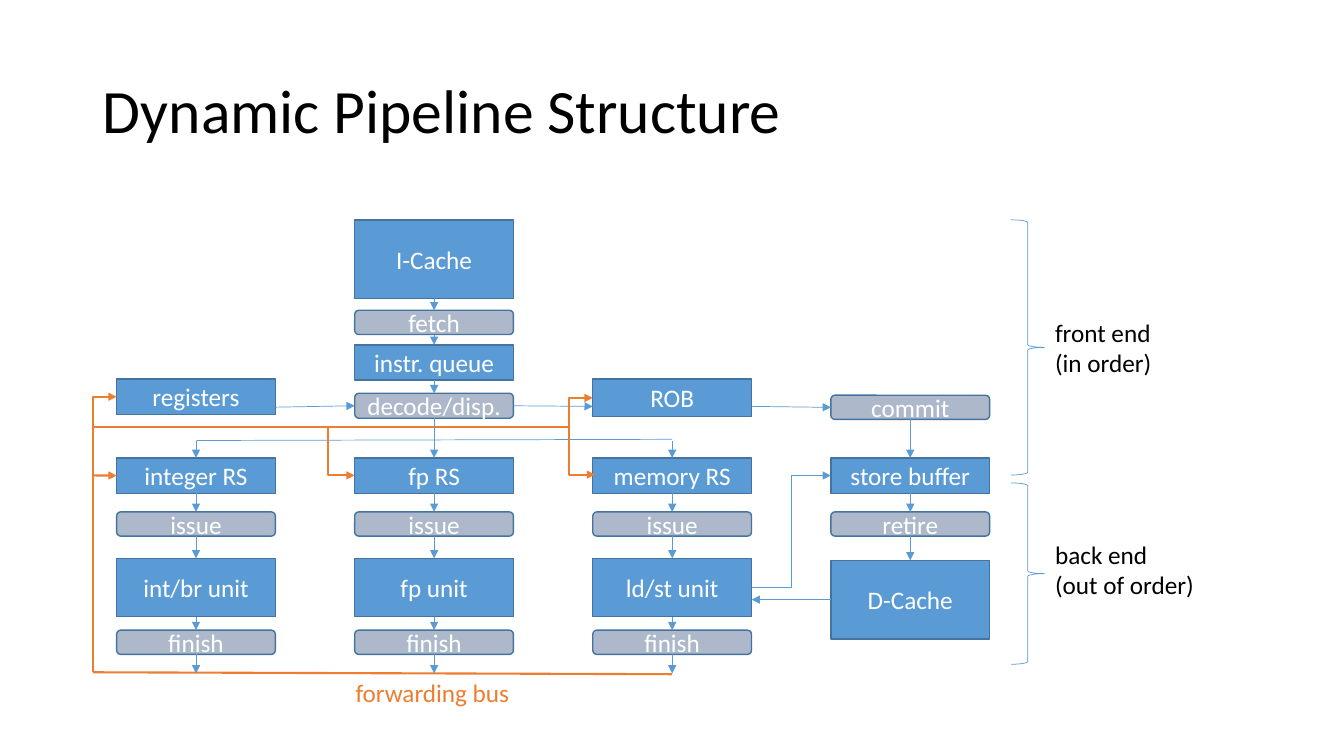
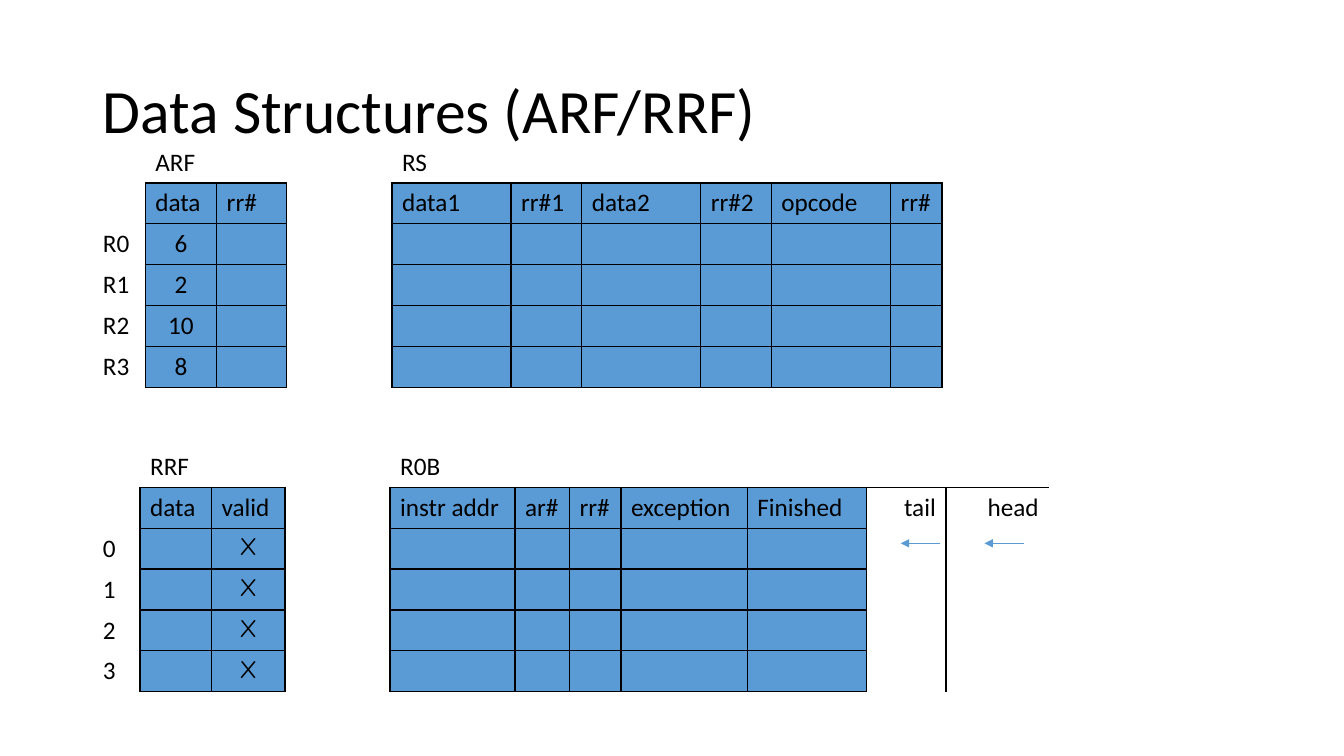
from dataclasses import dataclass
from itertools import pairwise

from lxml.etree import SubElement
from pptx import Presentation
from pptx.dml.color import RGBColor
from pptx.enum.shapes import MSO_CONNECTOR as Link, MSO_SHAPE as Preset
from pptx.enum.text import MSO_ANCHOR as Anchor, MSO_AUTO_SIZE as AutoSize, PP_ALIGN as Align
from pptx.oxml.ns import qn
from pptx.util import Cm, Pt

COLOURS = {
    "block": "5B9BD5",
    "step": "ADB9CA",
    "edge": "43739E",
    "bus": "ED7D31",
    "ink": "000000",
    "paper": "FFFFFF",
}
FONT = "Calibri"
MARK_FONT = "Comic Neue"
NO_STYLE = "{2D5ABB26-0587-4C30-8999-92F81FD0307C}"
TOP, LEFT, BOTTOM, RIGHT = range(4)
FIRST_COLUMN, COLUMN_STEP, BLOCK_WIDTH = 2.94, 6, 4
ROW_HEIGHT = 1.03
BUS_LEFT = 2.34
BUS_TOP = 10.77
BUS_BOTTOM = 16.94


@dataclass(frozen=True)
class Block:
    label: str
    top: float
    height: float
    step: bool = False


@dataclass(frozen=True)
class Label:
    lines: tuple
    left: float
    top: float
    width: float
    height: float
    colour: str = "ink"


@dataclass(frozen=True)
class Grid:
    left: float
    top: float
    widths: tuple
    captions: tuple
    rows: tuple
    filled: frozenset
    centred: int = -1
    right: tuple = ()


def rgb(name: str) -> RGBColor:
    return RGBColor.from_string(COLOURS[name])


def format_para(para, colour: str, size: int = 18, font: str = FONT, align=Align.LEFT) -> None:
    para.alignment = align
    para.font.name = font
    para.font.size = Pt(size)
    para.font.color.rgb = rgb(colour)


def add_page(deck, title: str):
    page = deck.slides.add_slide(deck.slide_layouts[5])
    box = page.shapes.title
    box.left, box.top, box.width, box.height = Cm(2.34), Cm(1.02), Cm(29.21), Cm(3.68)
    box.text_frame.text = title
    box.text_frame.vertical_anchor = Anchor.MIDDLE
    para = box.text_frame.paragraphs[0]
    format_para(para, "ink", 44)
    para.line_spacing = 0.9
    return page


def style_line(line, colour: str, arrow: bool, width: float) -> None:
    line.line.color.rgb = rgb(colour)
    line.line.width = Pt(width)
    properties = line.element.spPr
    if arrow:
        SubElement(properties.find(qn("a:ln")), qn("a:tailEnd"), type="triangle")
    SubElement(properties, qn("a:effectLst"))


def add_line(page, start: tuple, end: tuple, colour: str = "block", arrow: bool = True,
             begin=None, finish=None, kind=Link.STRAIGHT):
    line = page.shapes.add_connector(kind, *(Cm(value) for value in start + end))
    if begin:
        line.begin_connect(*begin)
    if finish:
        line.end_connect(*finish)
    style_line(line, colour, arrow, 1.5 if colour == "bus" else 0.5)
    return line


def add_corner(page, start: tuple, end: tuple) -> None:
    (x1, y1), (x2, y2) = start, end
    middle_x, middle_y = (x1 + x2) / 2, (y1 + y2) / 2
    half_width, half_height = abs(y2 - y1) / 2, abs(x2 - x1) / 2
    line = add_line(page, (middle_x - half_width, middle_y - half_height),
                    (middle_x + half_width, middle_y + half_height), "bus", kind=Link.ELBOW)
    properties = line.element.spPr
    properties.find(qn("a:prstGeom")).set("prst", "bentConnector2")
    frame = properties.find(qn("a:xfrm"))
    rising = y2 < y1
    frame.set("rot", str((90 if rising else 270) * 60000))
    frame.set("flipH", "1")
    if rising:
        frame.set("flipV", "1")


def add_block(page, block: Block, column: int):
    shape = page.shapes.add_shape(
        Preset.ROUNDED_RECTANGLE if block.step else Preset.RECTANGLE,
        Cm(FIRST_COLUMN + COLUMN_STEP * column), Cm(block.top), Cm(BLOCK_WIDTH), Cm(block.height))
    shape.shadow.inherit = False
    shape.fill.solid()
    shape.fill.fore_color.rgb = rgb("step" if block.step else "block")
    shape.line.color.rgb = rgb("edge")
    shape.line.width = Pt(1)
    shape.text_frame.text = block.label
    shape.text_frame.vertical_anchor = Anchor.MIDDLE
    format_para(shape.text_frame.paragraphs[0], "paper", align=Align.CENTER)
    return shape


def add_chain(page, blocks: tuple, column: int) -> list:
    shapes = [add_block(page, block, column) for block in blocks]
    for upper, lower in pairwise(shapes):
        add_line(page, (0, 0), (0, 0), begin=(upper, BOTTOM), finish=(lower, TOP))
    return shapes


def add_label(page, label: Label) -> None:
    box = page.shapes.add_textbox(Cm(label.left), Cm(label.top), Cm(label.width), Cm(label.height))
    frame = box.text_frame
    frame.word_wrap = False
    frame.auto_size = AutoSize.SHAPE_TO_FIT_TEXT
    frame.text = "\n".join(label.lines)
    for para in frame.paragraphs:
        format_para(para, label.colour)


def add_brace(page, top: float, height: float) -> None:
    brace = page.shapes.add_shape(Preset.RIGHT_BRACE, Cm(25.48), Cm(top), Cm(0.84), Cm(height))
    brace.shadow.inherit = False
    brace.fill.background()
    brace.line.color.rgb = rgb("block")
    brace.line.width = Pt(0.5)


def add_border(cell, side: str) -> None:
    border = SubElement(cell._tc.get_or_add_tcPr(), qn(f"a:ln{side}"), w=str(Pt(1)))
    fill = SubElement(border, qn("a:solidFill"))
    SubElement(fill, qn("a:srgbClr"), val=COLOURS["ink"])


def add_grid(page, grid: Grid) -> None:
    row_count, column_count = len(grid.rows) + 1, len(grid.widths)
    frame = page.shapes.add_table(row_count, column_count, Cm(grid.left), Cm(grid.top),
                                  Cm(sum(grid.widths)), Cm(ROW_HEIGHT * row_count))
    table = frame.table
    table.first_row = table.horz_banding = False
    frame.element.find(f".//{qn('a:tableStyleId')}").text = NO_STYLE
    for column, width in zip(table.columns, grid.widths):
        column.width = Cm(width)
    for row in table.rows:
        row.height = Cm(ROW_HEIGHT)

    texts = {(row, column): text for row, line in enumerate(grid.rows, 1)
             for column, text in enumerate(line)}
    for start, span, caption in grid.captions:
        texts[0, start] = caption
        table.cell(0, start).merge(table.cell(0, start + span - 1))

    def is_filled(row: int, column: int) -> bool:
        return 0 < row < row_count and column in grid.filled

    for row in range(row_count):
        for column in range(column_count):
            cell = table.cell(row, column)
            for side, down, across in (("L", 0, -1), ("R", 0, 1), ("T", -1, 0), ("B", 1, 0)):
                if is_filled(row, column) or is_filled(row + down, column + across):
                    add_border(cell, side)
            if is_filled(row, column):
                cell.fill.solid()
                cell.fill.fore_color.rgb = rgb("block")
            else:
                cell.fill.background()
            text = texts.get((row, column), "")
            if text:
                cell.text = text
            align = Align.LEFT
            if row > 1 and column == grid.centred:
                align = Align.CENTER
            elif row > 0 and column in grid.right:
                align = Align.RIGHT
            format_para(cell.text_frame.paragraphs[0], "ink",
                        font=MARK_FONT if text == "X" else FONT, align=align)


def execution_blocks(station: str, unit: str) -> tuple:
    return (Block(station, 11.54, 0.89), Block("issue", 12.9, 0.61, True),
            Block(unit, 14.07, 1.47), Block("finish", 15.88, 0.61, True))


FRONT_BLOCKS = (
    Block("I-Cache", 5.54, 1.98),
    Block("fetch", 7.82, 0.61, True),
    Block("instr. queue", 8.69, 0.89),
    Block("decode/disp.", 9.91, 0.63, True),
)
STORE_BLOCKS = (
    Block("commit", 9.96, 0.61, True),
    Block("store buffer", 11.54, 0.89),
    Block("retire", 12.9, 0.61, True),
    Block("D-Cache", 14.12, 1.98),
)
LABELS = (
    Label(("front end", "(in order)"), 26.34, 7.87, 2.95, 1.8),
    Label(("back end", "(out of order)"), 26.34, 13.46, 4.06, 1.8),
    Label(("forwarding bus",), 8.71, 16.94, 4.42, 1.02, "bus"),
)
GRIDS = (
    Grid(2.34, 3.58, (1.32, 1.8, 1.75, 2.67, 3, 1.78, 3, 1.78, 3, 1.3),
         ((1, 2, "ARF"), (4, 6, "RS")),
         (("", "data", "rr#", "", "data1", "rr#1", "data2", "rr#2", "opcode", "rr#"),
          ("R0", "6"), ("R1", "2"), ("R2", "10"), ("R3", "8")),
         frozenset({1, 2, *range(4, 10)}), centred=1),
    Grid(9.83, 11.25, (3.15, 1.37, 1.3, 3.18, 3, 2.01, 2.59),
         ((0, 7, "R0B"),),
         (("instr addr", "ar#", "rr#", "exception", "Finished", "tail", "head"), (), (), (), ()),
         frozenset(range(5)), right=(5, 6)),
    Grid(2.34, 11.25, (1.19, 1.8, 1.85),
         ((1, 2, "RRF"),),
         (("", "data", "valid"), *((str(number), "", "X") for number in range(4))),
         frozenset({1, 2}), centred=2),
)


def build_pipeline(deck) -> None:
    page = add_page(deck, "Dynamic Pipeline Structure")
    add_line(page, (BUS_LEFT, BUS_TOP), (14.33, BUS_TOP), "bus", False)
    integer = add_chain(page, execution_blocks("integer RS", "int/br unit"), 0)
    centre = add_chain(page, FRONT_BLOCKS + execution_blocks("fp RS", "fp unit"), 1)
    memory = add_chain(page, execution_blocks("memory RS", "ld/st unit"), 2)
    store = add_chain(page, STORE_BLOCKS, 3)
    add_block(page, Block("registers", 9.55, 0.89), 0)
    add_block(page, Block("ROB", 9.55, 0.94), 2)
    decode = centre[3]

    add_line(page, (4.95, 11.1), (16.94, 11.07), arrow=False)
    for station in (integer[0], memory[0]):
        x = (station.left + station.width / 2) / Cm(1)
        add_line(page, (x, 11.1), (x, 11.54), finish=(station, TOP))
    add_line(page, (6.94, 10.26), (8.94, 10.24), finish=(decode, LEFT))
    add_line(page, (12.94, 10.24), (14.94, 10.24), begin=(decode, RIGHT))
    add_line(page, (18.94, 10.24), (20.94, 10.24), finish=(store[0], LEFT))
    add_line(page, (20.94, 15.11), (18.94, 15.11), begin=(store[3], LEFT))
    add_line(page, (18.94, 14.8), (20.94, 11.98), begin=(memory[2], RIGHT),
             finish=(store[1], LEFT), kind=Link.ELBOW)

    add_line(page, (BUS_LEFT, BUS_BOTTOM), (16.94, 16.99), "bus", False)
    for chain in (integer, centre, memory):
        finish = chain[-1]
        x = (finish.left + finish.width / 2) / Cm(1)
        add_line(page, (x, 16.49), (x, 16.97), begin=(finish, BOTTOM))
    add_corner(page, (BUS_LEFT, BUS_BOTTOM), (2.94, 10))
    add_line(page, (BUS_LEFT, 11.98), (2.94, 11.98), "bus", finish=(integer[0], LEFT))
    add_corner(page, (8.26, BUS_TOP), (8.94, 11.98))
    for end in ((15, 11.96), (14.94, 10.03)):
        add_corner(page, (14.33, 10.75), end)

    add_brace(page, 5.54, 6.43)
    add_brace(page, 12.17, 4.57)
    for label in LABELS:
        add_label(page, label)


def build_data_structures(deck) -> None:
    page = add_page(deck, "Data Structures (ARF/RRF)")
    for grid in GRIDS:
        add_grid(page, grid)
    for x in (23.7, 25.81):
        add_line(page, (x, 13.69), (x - 1, 13.69))


def main() -> None:
    deck = Presentation()
    deck.slide_width, deck.slide_height = Cm(33.87), Cm(19.05)
    build_pipeline(deck)
    build_data_structures(deck)
    deck.save("out.pptx")


if __name__ == "__main__":
    main()
